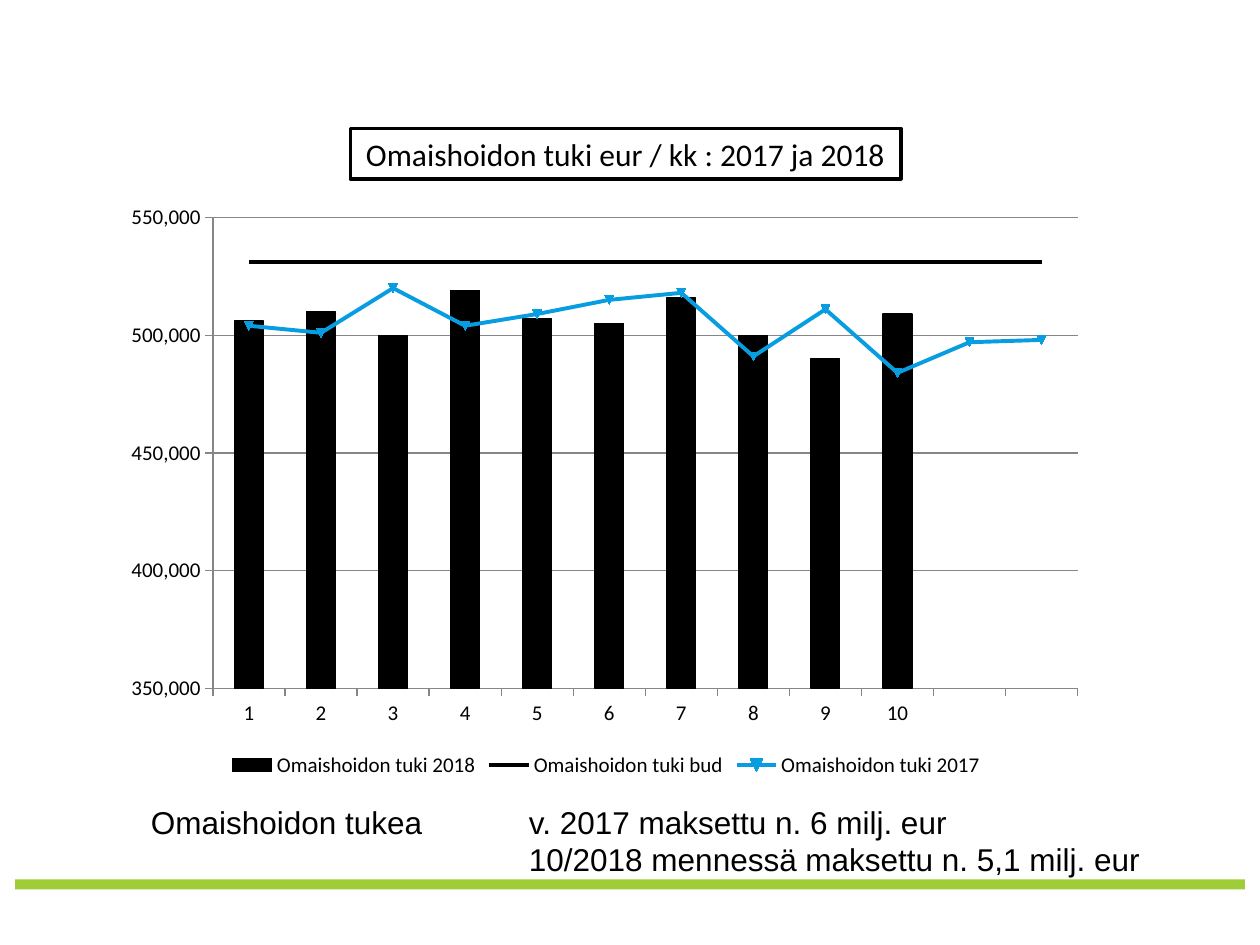
from dataclasses import dataclass

from pptx import Presentation
from pptx.chart.data import CategoryChartData
from pptx.dml.color import RGBColor
from pptx.enum.chart import XL_CHART_TYPE as ChartType, XL_LEGEND_POSITION as LegendPosition
from pptx.enum.chart import XL_MARKER_STYLE as MarkerStyle, XL_TICK_MARK as TickMark
from pptx.enum.shapes import MSO_SHAPE as Shape
from pptx.enum.text import MSO_ANCHOR as Anchor, PP_ALIGN as Align
from pptx.oxml import parse_xml
from pptx.oxml.ns import nsdecls, qn
from pptx.util import Inches, Pt


@dataclass(frozen=True)
class Theme:
    black: RGBColor = RGBColor.from_string("000000")
    white: RGBColor = RGBColor.from_string("FFFFFF")
    green: RGBColor = RGBColor.from_string("9FCD37")
    blue: RGBColor = RGBColor.from_string("089DE0")
    gray: RGBColor = RGBColor.from_string("868686")
    chart_font: str = "Calibri"
    note_font: str = "Arial"
    text_size: Pt = Pt(18)
    chart_size: Pt = Pt(12)


theme = Theme()


def set_font(font, name, size):
    font.name = name
    font.size = size
    font.color.rgb = theme.black


presentation = Presentation()
presentation.slide_width = Inches(10)
presentation.slide_height = Inches(7.5)
slide = presentation.slides.add_slide(presentation.slide_layouts[5])

# Footer bar
bar = slide.shapes.add_shape(
    Shape.RECTANGLE, Inches(0.12), Inches(6.98), Inches(9.76), Inches(0.08)
)
bar.shadow.inherit = False
bar.fill.solid()
bar.fill.fore_color.rgb = theme.green
bar.line.fill.background()

# Framed title
title = slide.shapes.title
title.left, title.top = Inches(2.78), Inches(1.02)
title.width, title.height = Inches(4.37), Inches(0.4)
title.fill.solid()
title.fill.fore_color.rgb = theme.white
title.line.color.rgb = theme.black
title.line.width = Pt(2)
title.text_frame.text = "Omaishoidon tuki eur / kk : 2017 ja 2018"
title.text_frame.word_wrap = False
title.text_frame.vertical_anchor = Anchor.MIDDLE
title_paragraph = title.text_frame.paragraphs[0]
title_paragraph.alignment = Align.CENTER
set_font(title_paragraph.runs[0].font, theme.chart_font, theme.text_size)

# Totals, with the second column at a tab stop
totals = slide.shapes.add_textbox(Inches(1.1), Inches(6.32), Inches(8.13), Inches(1.01))
totals.text_frame.word_wrap = False
totals.text_frame.text = (
    "Omaishoidon tukea \tv. 2017 maksettu n. 6 milj. eur\n"
    "\t10/2018 mennessä maksettu n. 5,1 milj. eur"
)
for paragraph in totals.text_frame.paragraphs:
    paragraph.alignment = Align.LEFT
    paragraph_properties = paragraph._p.get_or_add_pPr()
    paragraph_properties.append(parse_xml(
        f'<a:tabLst {nsdecls("a")}><a:tab pos="{Inches(3)}" algn="l"/></a:tabLst>'
    ))
    for run in paragraph.runs:
        set_font(run.font, theme.note_font, theme.text_size)

# Monthly chart: only the months with 2018 figures are labelled
paid_2018 = [506000, 510000, 500000, 519000, 507000, 505000,
             516000, 500000, 490000, 509000, None, None]
paid_2017 = [504000, 501000, 520000, 504000, 509000, 515000,
             518000, 491000, 511000, 484000, 497000, 498000]
chart_data = CategoryChartData(number_format="#,##0")
chart_data.categories = [
    str(month) if paid else "" for month, paid in enumerate(paid_2018, start=1)
]
chart_data.add_series("Omaishoidon tuki 2018", paid_2018)
chart_data.add_series("Omaishoidon tuki bud", [531000] * 12)
chart_data.add_series("Omaishoidon tuki 2017", paid_2017)
chart = slide.shapes.add_chart(
    ChartType.COLUMN_CLUSTERED,
    Inches(0.91), Inches(1.54), Inches(7.8), Inches(4.67), chart_data,
).chart
chart.has_title = False
set_font(chart.font, theme.chart_font, theme.chart_size)
chart.has_legend = True
chart.legend.position = LegendPosition.BOTTOM
chart.legend.include_in_layout = False

# Move the budget and 2017 series to a line chart on the same axes
column_plot = chart.plots[0]
column_plot.gap_width = 150
column_plot.vary_by_categories = False
columns, *line_series = column_plot.series
column_chart = columns._element.getparent()
line_chart = parse_xml(
    f'<c:lineChart {nsdecls("c")}><c:grouping val="standard"/><c:varyColors val="0"/></c:lineChart>'
)
for series in line_series:
    for bar_setting in series._element.findall(qn("c:invertIfNegative")):
        series._element.remove(bar_setting)
    line_chart.append(series._element)
line_chart.append(parse_xml(f'<c:marker {nsdecls("c")} val="1"/>'))
for axis_id in column_chart.findall(qn("c:axId")):
    line_chart.append(parse_xml(f'<c:axId {nsdecls("c")} val="{axis_id.get("val")}"/>'))
column_chart.addnext(line_chart)

# Fixed plot area
plot_area = line_chart.getparent()
for layout in plot_area.findall(qn("c:layout")):
    plot_area.remove(layout)
plot_area.insert(0, parse_xml(
    f'<c:layout {nsdecls("c")}><c:manualLayout><c:layoutTarget val="inner"/>'
    '<c:xMode val="edge"/><c:yMode val="edge"/><c:x val="0.1"/><c:y val="0.04"/>'
    '<c:w val="0.88"/><c:h val="0.8"/></c:manualLayout></c:layout>'
))

columns.format.fill.solid()
columns.format.fill.fore_color.rgb = theme.black
columns.format.line.color.rgb = theme.black
columns.format.line.width = Pt(0.75)

budget, previous_year = chart.plots[1].series
for series, color in ((budget, theme.black), (previous_year, theme.blue)):
    series.smooth = False
    series.format.line.color.rgb = color
    series.format.line.width = Pt(2.25)
budget.marker.style = MarkerStyle.NONE
marker = previous_year.marker
marker.style = MarkerStyle.AUTOMATIC
marker.size = 5
marker.format.fill.solid()
marker.format.fill.fore_color.rgb = theme.blue
marker.format.line.color.rgb = theme.blue

value_axis = chart.value_axis
value_axis.minimum_scale = 350000
value_axis.maximum_scale = 550000
value_axis.major_unit = 50000
value_axis.has_major_gridlines = True
value_axis.tick_labels.number_format = "#,##0"
value_axis.tick_labels.number_format_is_linked = False
value_axis.major_gridlines.format.line.color.rgb = theme.gray
for axis in (chart.category_axis, value_axis):
    axis.major_tick_mark = TickMark.OUTSIDE
    axis.minor_tick_mark = TickMark.NONE
    axis.format.line.color.rgb = theme.gray

presentation.save("out.pptx")
